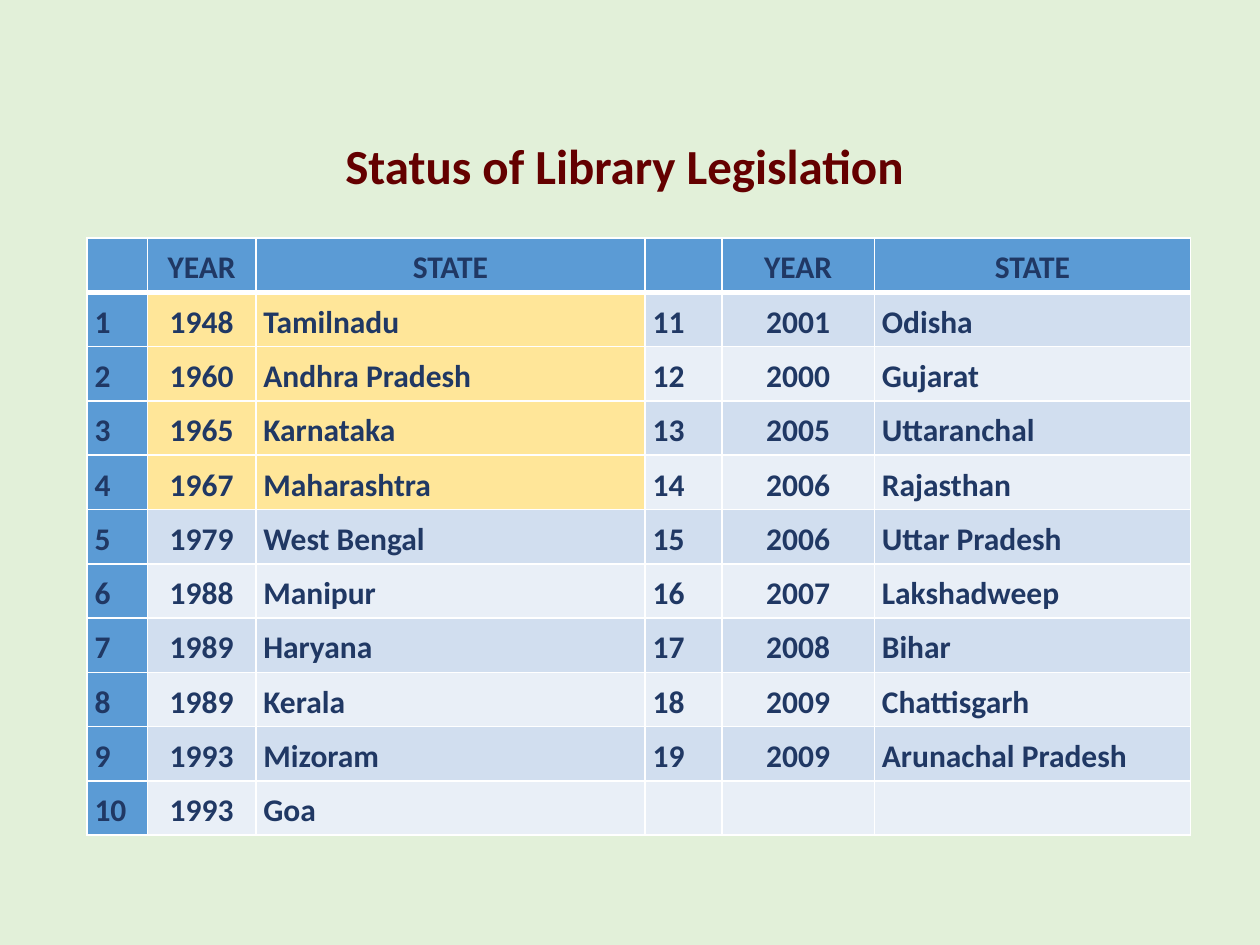
from lxml.etree import SubElement
from pptx import Presentation
from pptx.dml.color import RGBColor
from pptx.enum.text import MSO_ANCHOR, PP_ALIGN
from pptx.oxml.ns import qn
from pptx.util import Inches, Pt

HEADER = ["", "YEAR", "STATE"]
ACTS = [
    (1948, "Tamilnadu"), (1960, "Andhra Pradesh"), (1965, "Karnataka"),
    (1967, "Maharashtra"), (1979, "West Bengal"), (1988, "Manipur"),
    (1989, "Haryana"), (1989, "Kerala"), (1993, "Mizoram"), (1993, "Goa"),
    (2001, "Odisha"), (2000, "Gujarat"), (2005, "Uttaranchal"),
    (2006, "Rajasthan"), (2006, "Uttar Pradesh"), (2007, "Lakshadweep"),
    (2008, "Bihar"), (2009, "Chattisgarh"), (2009, "Arunachal Pradesh"),
]
ROWS_PER_HALF = 10
HIGHLIGHTED_ROWS = 4
COL_WIDTHS = [0.48, 0.86, 3.09, 0.61, 1.21, 2.51]
ROW_HEIGHT = 0.42


def color(hex_string):
    return RGBColor.from_string(hex_string)


def table_rows():
    """Pair the first ten acts with the rest, side by side, under one header."""
    entries = [[str(n), str(year), state] for n, (year, state) in enumerate(ACTS, 1)]
    entries += [[""] * 3] * (2 * ROWS_PER_HALF - len(entries))
    halves = zip(entries[:ROWS_PER_HALF], entries[ROWS_PER_HALF:])
    return [HEADER * 2] + [left + right for left, right in halves]


class SlideBuilder:
    font = "Calibri"
    background = "E2F0D9"
    title_color = "640000"
    text_color = "203864"
    accent = "5B9BD5"
    highlight = "FFE699"
    bands = ["E9EFF7", "D1DEEF"]
    border = "FFFFFF"

    def __init__(self, prs):
        self.s = prs.slides.add_slide(prs.slide_layouts[5])
        fill = self.s.background.fill
        fill.solid()
        fill.fore_color.rgb = color(self.background)

    def run(self, p, text, size, hex_string):
        r = p.add_run()
        r.text = text
        r.font.name = self.font
        r.font.size = Pt(size)
        r.font.bold = True
        r.font.color.rgb = color(hex_string)

    def title(self, text, left, top, width, height):
        sp = self.s.shapes.title
        sp.left, sp.top = Inches(left), Inches(top)
        sp.width, sp.height = Inches(width), Inches(height)
        tf = sp.text_frame
        tf.vertical_anchor = MSO_ANCHOR.MIDDLE
        p = tf.paragraphs[0]
        p.alignment = PP_ALIGN.CENTER
        self.run(p, text, 28, self.title_color)

    def cell_fill(self, row, col):
        if row == 0 or col == 0:
            return self.accent
        if row <= HIGHLIGHTED_ROWS and col in (1, 2):
            return self.highlight
        return self.bands[row % 2]

    def cell_borders(self, cell, row):
        widths = {"L": 0.96, "R": 0.96,
                  "T": 3 if row == 1 else 0.96,
                  "B": 3 if row == 0 else 0.96}
        tc_pr = cell._tc.get_or_add_tcPr()
        for side, width in widths.items():
            ln = SubElement(tc_pr, qn(f"a:ln{side}"), w=str(Pt(width)))
            solid = SubElement(ln, qn("a:solidFill"))
            SubElement(solid, qn("a:srgbClr"), val=self.border)

    def cell(self, cell, text, row, col):
        cell.margin_left = cell.margin_right = Inches(0.06)
        cell.margin_top = cell.margin_bottom = Inches(0.04)
        self.cell_borders(cell, row)
        cell.fill.solid()
        cell.fill.fore_color.rgb = color(self.cell_fill(row, col))
        if text:
            p = cell.text_frame.paragraphs[0]
            p.line_spacing = 1.15
            centered = row == 0 or col % 3 == 1
            p.alignment = PP_ALIGN.CENTER if centered else PP_ALIGN.LEFT
            self.run(p, text, 18, self.text_color)

    def table(self, rows, left, top):
        frame = self.s.shapes.add_table(
            len(rows), len(COL_WIDTHS), Inches(left), Inches(top),
            Inches(sum(COL_WIDTHS)), Inches(ROW_HEIGHT * len(rows)))
        table = frame.table
        table.first_row = table.horz_banding = False
        for column, width in zip(table.columns, COL_WIDTHS):
            column.width = Inches(width)
        for i, values in enumerate(rows):
            table.rows[i].height = Inches(ROW_HEIGHT)
            for j, text in enumerate(values):
                self.cell(table.cell(i, j), text, i, j)


def main():
    prs = Presentation()
    prs.slide_width, prs.slide_height = Inches(10), Inches(7.5)
    slide = SlideBuilder(prs)
    slide.title("Status of Library Legislation ", 0.69, 0.99, 8.62, 0.64)
    slide.table(table_rows(), 0.69, 1.89)
    prs.save("out.pptx")


if __name__ == "__main__":
    main()
